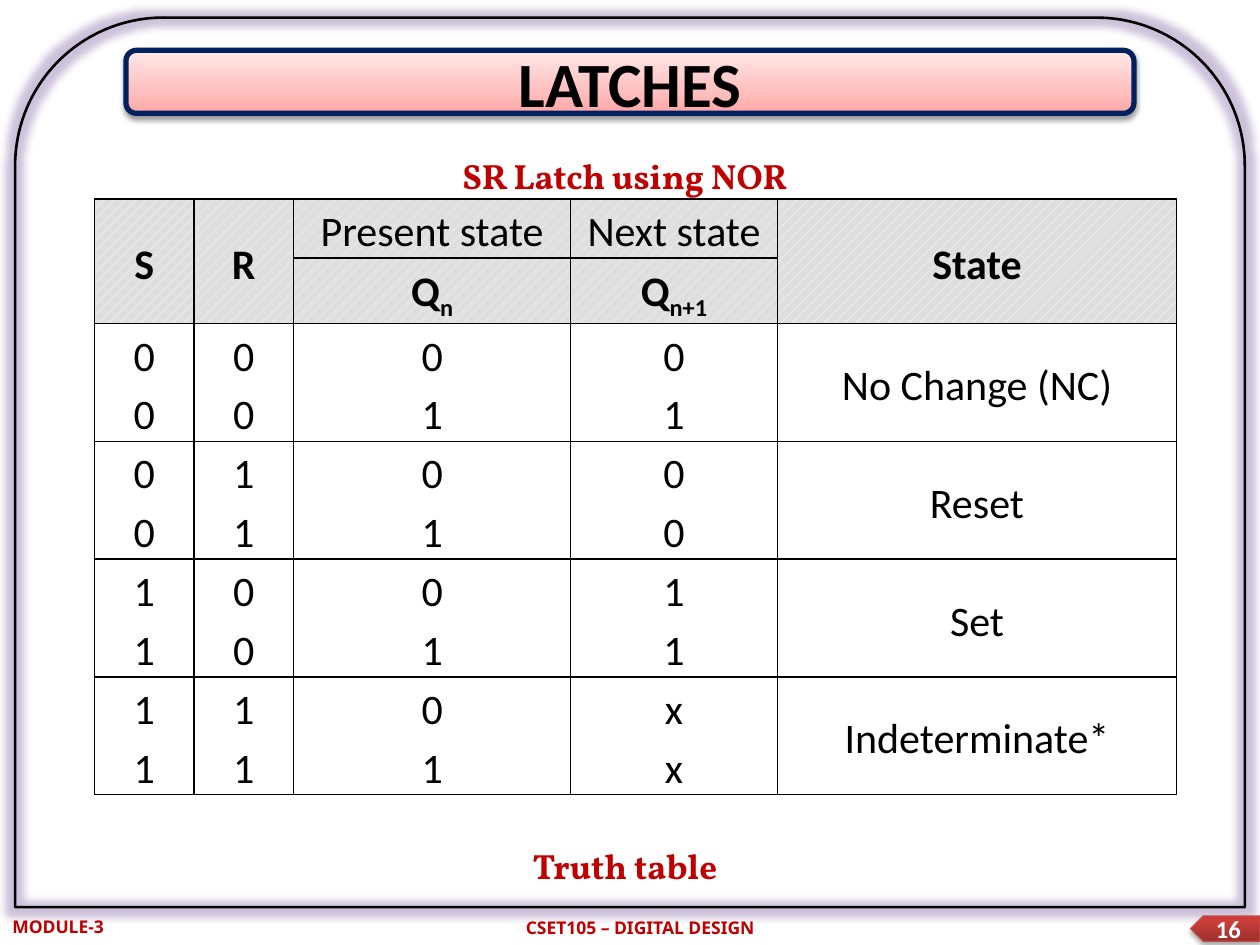
from lxml.etree import SubElement
from pptx import Presentation
from pptx.dml.color import RGBColor
from pptx.enum.dml import MSO_PATTERN
from pptx.enum.shapes import MSO_SHAPE
from pptx.enum.text import MSO_ANCHOR, PP_ALIGN
from pptx.oxml import parse_xml
from pptx.oxml.ns import nsdecls, qn
from pptx.util import Inches, Pt

TITLE = dict(size=36, name="Calibri", color="000000", bold=True)
HEAD = dict(TITLE, size=24)
BODY = dict(HEAD, bold=False)
PAGE = dict(TITLE, size=14, color="FFFFFF")
FOOT = dict(size=10, name="Noto Sans", color="C00000", bold=True)
LABEL = dict(FOOT, size=20, name="Vollkorn")

MID = PP_ALIGN.CENTER
LABELS = [
    ("CSET105 – DIGITAL DESIGN", (2.83, 7.23, 4.5, 0.27), FOOT, MID),
    ("MODULE-3", (0, 7.22, 1.83, 0.27), FOOT, PP_ALIGN.LEFT),
    ("SR Latch using NOR", (2.25, 1.17, 5.42, 0.44), LABEL, MID),
    ("Truth table", (2.25, 6.65, 5.42, 0.44), LABEL, MID),
]
PANELS = [
    ("LATCHES", MSO_SHAPE.ROUNDED_RECTANGLE, (1, 0.4, 8, 0.5), TITLE, ("002060", 3),
     [(0, "FFA6A5"), (35, "FFC0BF"), (100, "FFE7E7")], (38, 3.1, 1.6)),
    ("16", MSO_SHAPE.PENTAGON, (9.45, 7.27, 0.55, 0.2), PAGE, ("BF4C48", 0.75),
     [(0, "9C2F2D"), (80, "CB3E3A"), (100, "CE3B37")], (35, 3.1, 1.8)),
]
COLS = [0.79, 0.79, 2.2, 1.64, 3.17]
ROWS = [0.24, 0.24, 0.87, 0.87, 0.87, 0.89]
HEADS = [
    [("S", HEAD), ("R", HEAD), ("Present state", BODY), ("Next state", BODY), ("State", HEAD)],
    [None, None, ("Q_n", HEAD), ("Q_n+1", HEAD), None],
]
STATES = [
    ("00", "00", "01", "01", "No Change (NC)"),
    ("00", "11", "01", "00", "Reset"),
    ("11", "00", "01", "11", "Set"),
    ("11", "11", "01", "xx", "Indeterminate*"),
]


def rgb(code):
    return RGBColor.from_string(code)


def box(spot):
    return [Inches(v) for v in spot]


def style(run, look):
    for key, value in look.items():
        if key == "color":
            run.font.color.rgb = rgb(value)
        else:
            setattr(run.font, key, Pt(value) if key == "size" else value)


def write(frame, lines, look, align=MID, space=None):
    frame.word_wrap = True
    frame.vertical_anchor = MSO_ANCHOR.MIDDLE
    for i, line in enumerate(lines):
        para = frame.paragraphs[0] if i == 0 else frame.add_paragraph()
        para.alignment = align
        if space:
            para.line_spacing = space
        for j, part in enumerate(line.split("_")):
            run = para.add_run()
            run.text = part
            style(run, look)
            if j:
                run.font._element.set("baseline", "-25000")


def outline(shape, color, width):
    shape.line.color.rgb = rgb(color)
    shape.line.width = Pt(width)


def effect(shape, tag, color, alpha, **attrs):
    shape.shadow.inherit = False
    group = shape._element.spPr.find(qn("a:effectLst"))
    item = SubElement(group, qn(tag), {k: str(v) for k, v in attrs.items()})
    tone = SubElement(item, qn("a:srgbClr"), val=color)
    SubElement(tone, qn("a:alpha"), val=str(alpha * 1000))


def blend(shape, stops):
    marks = "".join(f'<a:gs pos="{p * 1000}"><a:srgbClr val="{c}"/></a:gs>' for p, c in stops)
    shape._element.spPr.insert(2, parse_xml(
        f'<a:gradFill {nsdecls("a")} rotWithShape="1"><a:gsLst>{marks}</a:gsLst>'
        '<a:lin ang="16200000" scaled="0"/></a:gradFill>'))


def border(cell):
    props = cell._tc.get_or_add_tcPr()
    for side in ("lnL", "lnR", "lnT", "lnB"):
        props.append(parse_xml(
            f'<a:{side} {nsdecls("a")} w="{Pt(1)}"><a:solidFill>'
            f'<a:srgbClr val="000000"/></a:solidFill></a:{side}>'))


def add_grid(slide):
    grid = slide.shapes.add_table(len(ROWS), len(COLS), *box((0.75, 1.58, sum(COLS), sum(ROWS)))).table
    grid.first_row = grid.horz_banding = False
    for col, width in zip(grid.columns, COLS):
        col.width = Inches(width)
    for row, height in zip(grid.rows, ROWS):
        row.height = Inches(height)
    body = [[(item, BODY) for item in state] for state in STATES]
    for r, items in enumerate(HEADS + body):
        for c, item in enumerate(items):
            cell = grid.cell(r, c)
            border(cell)
            cell.margin_left = cell.margin_right = Inches(0.07)
            cell.margin_top = cell.margin_bottom = 0
            cell.vertical_anchor = MSO_ANCHOR.MIDDLE
            if r < len(HEADS):
                cell.fill.patterned()
                cell.fill.pattern = MSO_PATTERN.PERCENT_20
                cell.fill.fore_color.rgb = rgb("FFFFFF")
                cell.fill.back_color.rgb = rgb("DFDFDF")
            else:
                cell.fill.background()
            if item:
                text, look = item
                pair = r >= len(HEADS) and c < len(COLS) - 1
                write(cell.text_frame, text if pair else [text], look, space=1.15)
    for c, item in enumerate(HEADS[1]):
        if item is None:
            grid.cell(0, c).merge(grid.cell(1, c))


def main():
    deck = Presentation()
    deck.slide_width, deck.slide_height = Inches(10), Inches(7.5)
    slide = deck.slides.add_slide(deck.slide_layouts[6])

    frame = slide.shapes.add_shape(MSO_SHAPE.ROUND_2_SAME_RECTANGLE, *box((0.12, 0.14, 9.76, 7.06)))
    frame.fill.background()
    outline(frame, "000000", 1.5)
    effect(frame, "a:glow", "8064A2", 40, rad=Pt(8))

    for text, kind, spot, look, line, stops, (alpha, blur, dist) in PANELS:
        panel = slide.shapes.add_shape(kind, *box(spot))
        outline(panel, *line)
        blend(panel, stops)
        effect(panel, "a:outerShdw", "000000", alpha, blurRad=Pt(blur), dist=Pt(dist),
               dir=5400000, rotWithShape=0)
        if kind == MSO_SHAPE.PENTAGON:
            panel._element.spPr.xfrm.set("flipH", "1")
        write(panel.text_frame, [text], look)

    add_grid(slide)
    for text, spot, look, align in LABELS:
        label = slide.shapes.add_textbox(*box(spot))
        write(label.text_frame, [text], look, align)
    deck.save("out.pptx")


if __name__ == "__main__":
    main()
